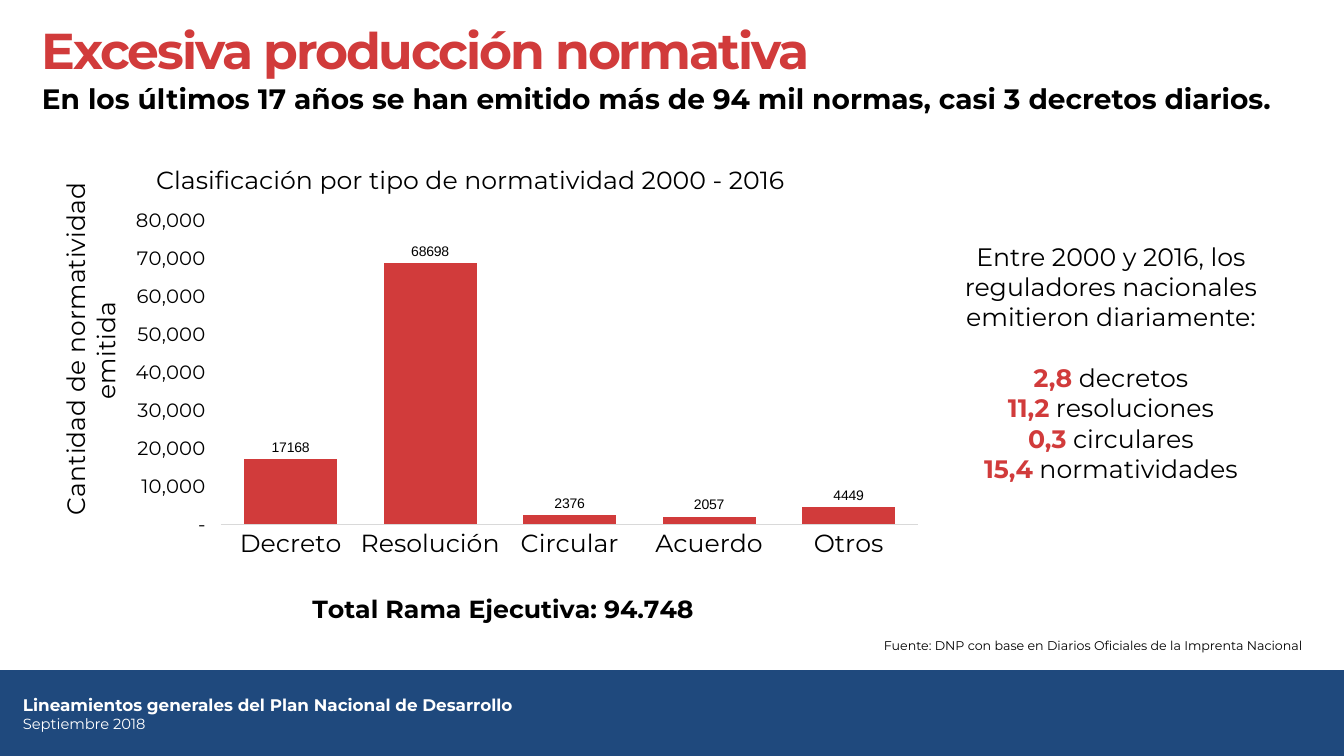
from pptx import Presentation
from pptx.chart.data import CategoryChartData
from pptx.dml.color import RGBColor
from pptx.enum.chart import XL_CHART_TYPE, XL_LABEL_POSITION, XL_TICK_MARK
from pptx.enum.shapes import MSO_SHAPE
from pptx.enum.text import MSO_ANCHOR, MSO_AUTO_SIZE, PP_ALIGN
from pptx.oxml import parse_xml
from pptx.oxml.ns import nsdecls, qn
from pptx.util import Emu, Pt

COLUMNS = XL_CHART_TYPE.COLUMN_CLUSTERED
OUTSIDE_END = XL_LABEL_POSITION.OUTSIDE_END
TICK_NONE, TICK_OUT = XL_TICK_MARK.NONE, XL_TICK_MARK.OUTSIDE
RECTANGLE = MSO_SHAPE.RECTANGLE
TOP, MIDDLE = MSO_ANCHOR.TOP, MSO_ANCHOR.MIDDLE
LEFT, CENTER, RIGHT = PP_ALIGN.LEFT, PP_ALIGN.CENTER, PP_ALIGN.RIGHT

COLORS = {"red": "D13B3B", "blue": "1F497D", "black": "000000",
          "white": "FFFFFF", "axis": "D9D9D9"}
FONT, LABEL_FONT = "Montserrat", "Arial"
SLIDE_W, SLIDE_H = 1344, 756
NUMBER_FORMAT = r"_(* #,##0_);_(* \(#,##0\);_(* \-_);_(@_)"

NORMS = {"Decreto": 17168, "Resolución": 68698, "Circular": 2376,
         "Acuerdo": 2057, "Otros": 4449}
DAILY = [("2,8", "decretos"), ("11,2", "resoluciones"),
         ("0,3", "circulares"), ("15,4", "normatividades")]


def px(n):
    return Emu(round(n * 914400 / 100.8))


def rgb(name):
    return RGBColor.from_string(COLORS[name])


def style(font, size, color="black", bold=False, name=FONT):
    font.size, font.bold, font.name = Pt(size), bold, name
    font.color.rgb = rgb(color)


def place(parent, index, x, y, w=None, h=None):
    """Give a chart part a manual layout, in fractions of the chart."""
    old = parent.find(qn("c:layout"))
    if old is not None:
        parent.remove(old)
    target = "" if w is None else '<c:layoutTarget val="inner"/>'
    size = "" if w is None else f'<c:w val="{w}"/><c:h val="{h}"/>'
    parent.insert(index, parse_xml(
        f'<c:layout {nsdecls("c")}><c:manualLayout>{target}'
        '<c:xMode val="edge"/><c:yMode val="edge"/>'
        f'<c:x val="{x}"/><c:y val="{y}"/>{size}</c:manualLayout></c:layout>'))


class Deck:
    def __init__(self):
        self.prs = Presentation()
        self.prs.slide_width, self.prs.slide_height = px(SLIDE_W), px(SLIDE_H)
        self.s = self.prs.slides.add_slide(self.prs.slide_layouts[5])

    def frame(self, sp, anchor=TOP, inset_y=5):
        tf = sp.text_frame
        tf.word_wrap, tf.auto_size = True, MSO_AUTO_SIZE.NONE
        tf.vertical_anchor = anchor
        tf.margin_left = tf.margin_right = px(10)
        tf.margin_top = tf.margin_bottom = px(inset_y)
        return tf

    def title(self, text, x, y, w, h):
        sp = self.s.shapes.title
        sp.left, sp.top, sp.width, sp.height = map(px, (x, y, w, h))
        p = self.frame(sp).paragraphs[0]
        p.alignment, p.line_spacing = LEFT, 0.9
        r = p.add_run()
        r.text = text
        r._r.get_or_add_rPr().set("spc", "-150")
        style(p.font, 36, "red", True)

    def band(self, x, y, w, h, color):
        sp = self.s.shapes.add_shape(RECTANGLE, *map(px, (x, y, w, h)))
        sp.shadow.inherit = False
        sp.fill.solid()
        sp.fill.fore_color.rgb = rgb(color)
        sp.line.fill.background()

    def text(self, x, y, w, h, **frame):
        sp = self.s.shapes.add_textbox(*map(px, (x, y, w, h)))
        return self.frame(sp, **frame)

    def paragraph(self, tf, text, size, color="black", bold=False, align=LEFT):
        p = tf.paragraphs[0]
        if p.runs:
            p = tf.add_paragraph()
        p.add_run().text = text
        p.alignment = align
        style(p.font, size, color, bold)
        return p

    def chart_title(self, owner, text, x, y, bold=False):
        """Title a chart or an axis at a fraction of the chart area."""
        title = getattr(owner, "axis_title", None) or owner.chart_title
        tf = title.text_frame
        p = tf.paragraphs[0]
        p.add_run().text = text
        style(p.font, 18, bold=bold)
        place(title._element, 1, x, y)
        return tf

    def column_chart(self, x, y, w, h, values):
        data = CategoryChartData()
        data.categories = list(values)
        data.add_series("Series 1", list(values.values()))
        chart = self.s.shapes.add_chart(COLUMNS, *map(px, (x, y, w, h)), data).chart
        style(chart.font, 10, name=LABEL_FONT)
        chart.has_legend = False
        place(chart._chartSpace.chart.plotArea, 0, 0.205, 0.159, 0.795, 0.631)

        plot = chart.plots[0]
        plot.gap_width, plot.vary_by_categories = 50, False
        fill = plot.series[0].format.fill
        fill.solid()
        fill.fore_color.rgb = rgb("red")
        plot.has_data_labels = True
        labels = plot.data_labels
        labels.show_value, labels.position = True, OUTSIDE_END
        style(labels.font, 10, name=LABEL_FONT)

        cat, val = chart.category_axis, chart.value_axis
        cat.major_tick_mark, val.major_tick_mark = TICK_NONE, TICK_OUT
        style(cat.tick_labels.font, 18)
        style(val.tick_labels.font, 14)
        cat.format.line.color.rgb = rgb("axis")
        cat.format.line.width = Pt(0.75)
        val.format.line.fill.background()
        val.has_major_gridlines = False
        val.minimum_scale, val.maximum_scale, val.major_unit = 0, 80000, 10000
        val.tick_labels.number_format = NUMBER_FORMAT
        val.tick_labels.number_format_is_linked = False
        return chart


def main():
    deck = Deck()
    deck.band(0, 670, SLIDE_W, 86, "blue")
    footer = deck.text(13, 685, 823, 55, inset_y=10)
    deck.paragraph(footer, "Lineamientos generales del Plan Nacional de Desarrollo",
                   12, "white", True)
    deck.paragraph(footer, "Septiembre 2018", 10.5, "white")

    deck.title("Excesiva producción normativa", 32, 21, 1280, 61)
    deck.paragraph(deck.text(32, 76, 1280, 39),
                   "En los últimos 17 años se han emitido más de 94 mil normas, "
                   "casi 3 decretos diarios.", 20, bold=True)
    deck.paragraph(deck.text(32, 632, 1280, 28, anchor=MIDDLE),
                   "Fuente: DNP con base en Diarios Oficiales de la Imprenta Nacional",
                   9, align=RIGHT)

    chart = deck.column_chart(41, 144, 878, 488, NORMS)
    deck.chart_title(chart, "Clasificación por tipo de normatividad 2000 - 2016",
                     0.126, 0.03)
    deck.chart_title(chart.category_axis, "Total Rama Ejecutiva: 94.748",
                     0.304, 0.92, bold=True)
    tf = deck.chart_title(chart.value_axis, "Cantidad de normatividad emitida",
                          0.014, 0.08)
    body = tf._txBody.find(qn("a:bodyPr"))
    body.set("rot", "-5400000")
    body.set("vert", "horz")

    summary = deck.text(936, 236, 350, 252)
    deck.paragraph(summary, "Entre 2000 y 2016, los reguladores nacionales "
                   "emitieron diariamente:", 18, align=CENTER)
    for i, (rate, kind) in enumerate(DAILY):
        p = deck.paragraph(summary, rate, 18, align=CENTER)
        p.space_before = Pt(0 if i else 22)
        p.runs[0].font.bold = True
        p.runs[0].font.color.rgb = rgb("red")
        p.add_run().text = f" {kind}"

    deck.prs.save("out.pptx")


if __name__ == "__main__":
    main()
